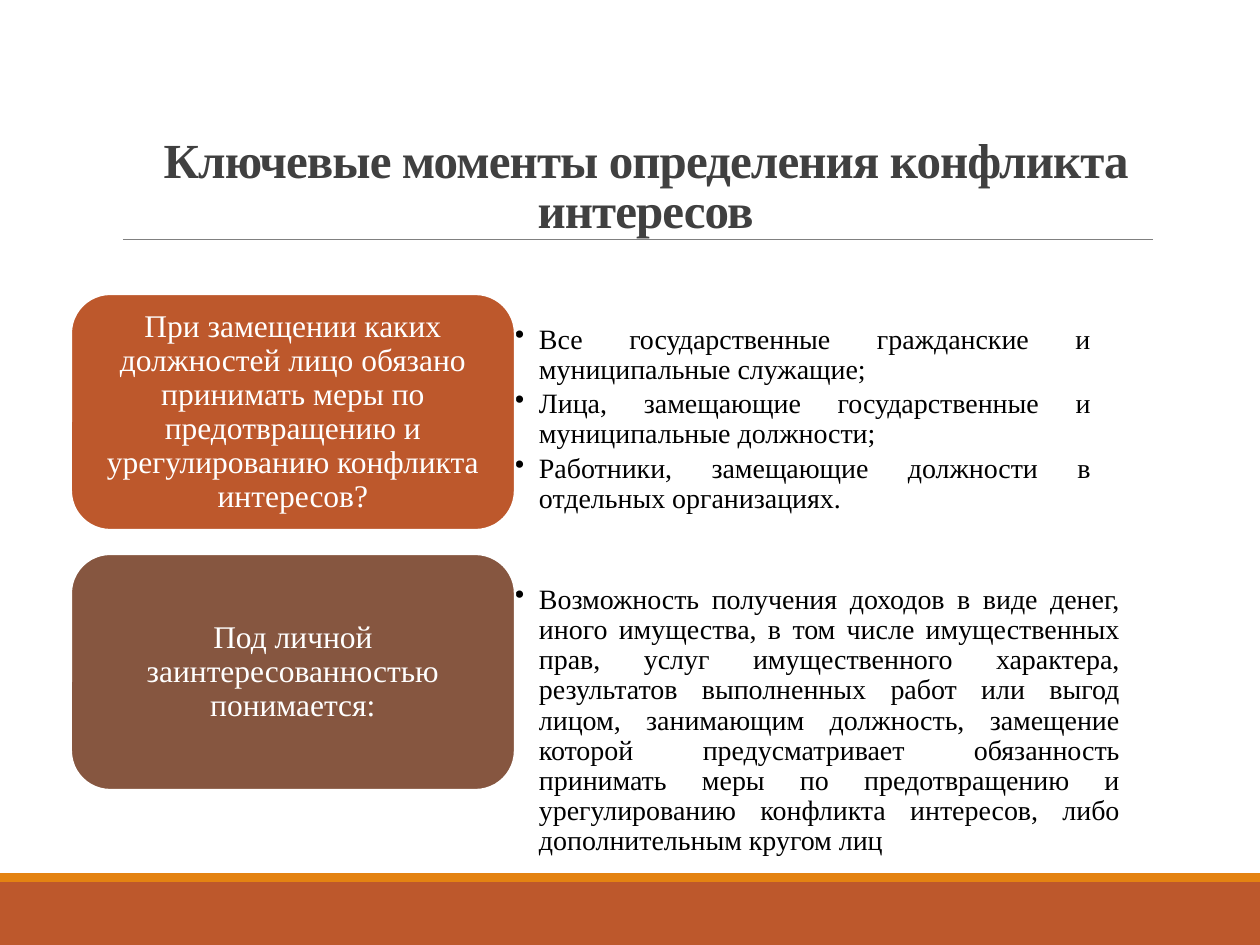
from dataclasses import dataclass

from lxml import etree
from pptx import Presentation
from pptx.dml.color import RGBColor
from pptx.enum.shapes import MSO_CONNECTOR, MSO_SHAPE
from pptx.enum.text import MSO_ANCHOR, PP_ALIGN
from pptx.oxml.ns import qn
from pptx.util import Pt

RECTANGLE = MSO_SHAPE.RECTANGLE
ROUNDED = MSO_SHAPE.ROUNDED_RECTANGLE
STRAIGHT = MSO_CONNECTOR.STRAIGHT
TOP, MIDDLE, BOTTOM = MSO_ANCHOR.TOP, MSO_ANCHOR.MIDDLE, MSO_ANCHOR.BOTTOM
CENTER, JUSTIFY = PP_ALIGN.CENTER, PP_ALIGN.JUSTIFY


@dataclass(frozen=True)
class Theme:
    font: str = "Times New Roman"
    rust: str = "BD582C"
    orange: str = "E48312"
    brown: str = "865640"
    rule: str = "808080"
    heading: str = "404040"
    body: str = "000000"
    white: str = "FFFFFF"
    title_size: int = 28
    card_size: int = 18
    bullet_size: int = 16


def px(length):
    return round(length * 914400 / 126)


def rgb(value):
    return RGBColor.from_string(value)


class SlideBuilder:
    def __init__(self, slide, theme):
        self.shapes = slide.shapes
        self.theme = theme

    def fill_text(self, box, paragraphs, size, color, align, anchor, insets,
                  line_spacing=0.9, bullet=False, title=False):
        frame = box.text_frame
        frame.word_wrap = True
        frame.vertical_anchor = anchor
        frame.margin_left = frame.margin_right = px(insets[0])
        frame.margin_top = frame.margin_bottom = px(insets[1])
        frame.text = "\n".join(paragraphs)
        for para in frame.paragraphs:
            para.alignment = align
            para.line_spacing = line_spacing
            if bullet:
                para.space_after = Pt(2.4)
                properties = para._p.get_or_add_pPr()
                properties.set("marL", str(px(24)))
                properties.set("indent", str(-px(24)))
                etree.SubElement(properties, qn("a:buChar")).set("char", "•")
            for span in para.runs:
                span.font.name = self.theme.font
                span.font.size = Pt(size)
                span.font.color.rgb = rgb(color)
                if title:
                    span.font.bold = True
                    span._r.get_or_add_rPr().set("spc", "-50")

    def text_box(self, left, top, width, height):
        return self.shapes.add_textbox(px(left), px(top), px(width), px(height))

    def title(self, left, top, width, height, text):
        self.fill_text(self.text_box(left, top, width, height), [text],
                       self.theme.title_size, self.theme.heading, CENTER, BOTTOM,
                       (13, 6), line_spacing=0.85, title=True)

    def bullets(self, left, top, width, height, items):
        self.fill_text(self.text_box(left, top, width, height), items,
                       self.theme.bullet_size, self.theme.body, JUSTIFY, TOP,
                       (1, 1), bullet=True)

    def block(self, kind, left, top, width, height, fill):
        shape = self.shapes.add_shape(kind, px(left), px(top), px(width), px(height))
        shape.shadow.inherit = False
        shape.fill.solid()
        shape.fill.fore_color.rgb = rgb(fill)
        shape.line.fill.background()
        return shape

    def card(self, left, top, width, height, fill, text):
        shape = self.block(ROUNDED, left, top, width, height, fill)
        shape.line.color.rgb = rgb(self.theme.white)
        shape.line.width = Pt(1.25)
        self.fill_text(shape, [text], self.theme.card_size, self.theme.white,
                       CENTER, MIDDLE, (9, 5))

    def rule(self, left, right, y):
        line = self.shapes.add_connector(STRAIGHT, px(left), px(y), px(right), px(y))
        line.line.color.rgb = rgb(self.theme.rule)
        line.line.width = Pt(0.5)
        etree.SubElement(line._element.spPr, qn("a:effectLst"))


def main():
    theme = Theme()
    deck = Presentation()
    deck.slide_width, deck.slide_height = px(1260), px(945)
    page = SlideBuilder(deck.slides.add_slide(deck.slide_layouts[6]), theme)

    # Footer bands and heading
    page.block(RECTANGLE, 0, 882, 1260, 63, theme.rust)
    page.block(RECTANGLE, 0, 873, 1260, 9, theme.orange)
    page.rule(123, 1153, 239)
    page.title(123, 96, 1045, 149, "Ключевые моменты определения конфликта интересов")

    # Question cards with their answers: fill, question, answer size, answers
    rows = [
        (theme.rust,
         "При замещении каких должностей лицо обязано принимать меры по "
         "предотвращению и урегулированию конфликта интересов?",
         (578, 178),
         ["Все государственные гражданские и муниципальные служащие;",
          "Лица, замещающие государственные и муниципальные должности;",
          "Работники, замещающие должности в отдельных организациях."]),
        (theme.brown,
         "Под личной заинтересованностью понимается:",
         (607, 117),
         ["Возможность получения доходов в виде денег, иного имущества, в том "
          "числе имущественных прав, услуг имущественного характера, результатов "
          "выполненных работ или выгод лицом, занимающим должность, замещение "
          "которой предусматривает обязанность принимать меры по предотвращению "
          "и урегулированию конфликта интересов, либо дополнительным кругом лиц"]),
    ]
    for index, (fill, question, (width, height), answers) in enumerate(rows):
        top = 294 + index * 260
        page.bullets(514, top + 30, width, height, answers)
        page.card(71, top, 444, 236, fill, question)

    deck.save("out.pptx")


if __name__ == "__main__":
    main()
